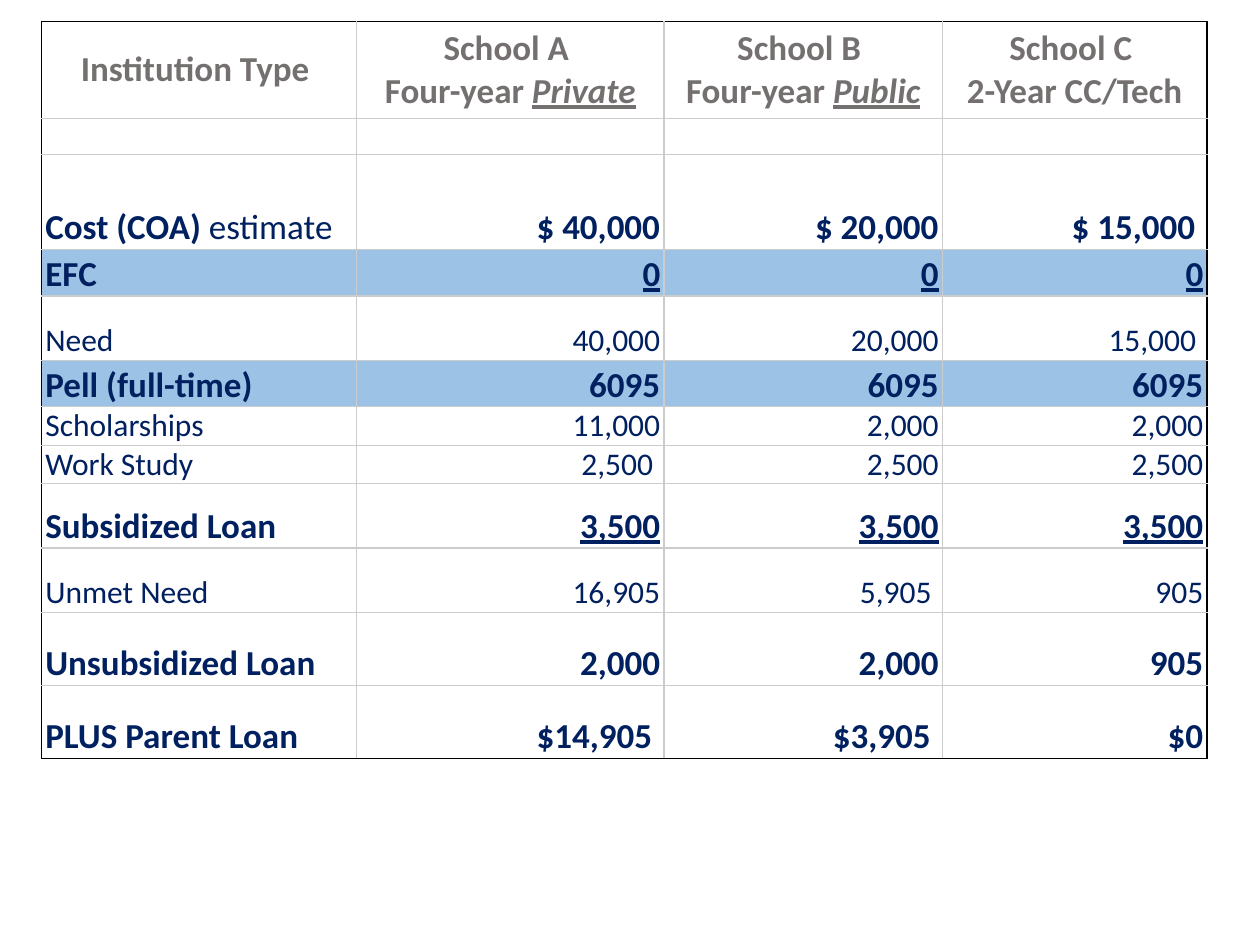
"""Build a slide that compares financial aid at three schools."""
import dataclasses

import lxml.etree
import pptx
import pptx.dml.color
import pptx.enum.text
import pptx.oxml.ns
import pptx.util

Inches = pptx.util.Inches
Align = pptx.enum.text.PP_ALIGN
Anchor = pptx.enum.text.MSO_ANCHOR


@dataclasses.dataclass(frozen=True)
class Theme:
    font: str = "Calibri"
    head: str = "757070"
    ink: str = "002060"
    band: str = "9CC2E5"
    grid: str = "CCCCCC"
    edge: str = "000000"
    big: int = 20
    small: int = 18
    tiny: int = 10
    line: float = 0.75


THEME = Theme()
WIDTHS = [2.5, 2.44, 2.21, 2.1]
HEADS = [
    [[("Institution Type ", "b")]],
    [[("School A ", "b")], [("Four-year ", "b"), ("Private", "biu")]],
    [[("School B ", "b")], [("Four-year ", "b"), ("Public", "biu")]],
    [[("School C ", "b")], [("2-Year CC/Tech", "b")]],
]
ROWS = [
    (0.75, "Cost (COA) ", ["$ 40,000", "$ 20,000", "$ 15,000 "], "b"),
    (0.37, "EFC", ["0", "0", "0"], "bu"),
    (0.51, "Need", ["40,000", "20,000", "15,000 "], ""),
    (0.37, "Pell (full-time)", ["6095", "6095", "6095"], "b"),
    (0.29, "Scholarships", ["11,000", "2,000", "2,000"], ""),
    (0.29, "Work Study", ["2,500 ", "2,500", "2,500"], ""),
    (0.51, "Subsidized Loan", ["3,500", "3,500", "3,500"], "bu"),
    (0.51, "Unmet Need", ["16,905", "5,905 ", "905"], ""),
    (0.58, "Unsubsidized Loan", ["2,000", "2,000", "905"], "b"),
    (0.58, "PLUS Parent Loan", ["$14,905 ", "$3,905 ", "$0"], "b"),
]
NOTES = {"Cost (COA) ": "estimate"}
BANDS = {"EFC", "Pell (full-time)"}
HEIGHTS = [0.77, 0.29] + [row[0] for row in ROWS]


def add_run(para, text, style, size, color):
    """Add one run; style letters mean bold, italic and underline."""
    run = para.add_run()
    run.text = text
    font = run.font
    font.name, font.size = THEME.font, pptx.util.Pt(size)
    font.bold, font.italic, font.underline = (key in style for key in "biu")
    font.color.rgb = pptx.dml.color.RGBColor.from_string(color)


def fill_text(cell, lines, align, anchor, size, color):
    """Write lines of runs into a cell."""
    cell.vertical_anchor = anchor
    frame = cell.text_frame
    for num, runs in enumerate(lines):
        para = frame.add_paragraph() if num else frame.paragraphs[0]
        para.alignment = align
        for text, style in runs:
            add_run(para, text, style, size, color)


def set_edge(cell, side, color):
    """Draw one border of a cell."""
    props = cell._tc.get_or_add_tcPr()
    name = pptx.oxml.ns.qn
    line = lxml.etree.SubElement(props, name("a:ln" + side))
    line.set("w", str(pptx.util.Pt(THEME.line)))
    fill = lxml.etree.SubElement(line, name("a:solidFill"))
    lxml.etree.SubElement(fill, name("a:srgbClr")).set("val", color)


def style_cell(cell, row, col, band):
    """Set the margins, borders and fill of a cell."""
    cell.margin_left = cell.margin_right = Inches(0.03)
    cell.margin_top = cell.margin_bottom = 0
    outer = {"L": col == 0, "R": col == len(WIDTHS) - 1,
             "T": row == 0, "B": row == len(HEIGHTS) - 1}
    for side, edge in outer.items():
        set_edge(cell, side, THEME.edge if edge else THEME.grid)
    if band:
        cell.fill.solid()
        cell.fill.fore_color.rgb = pptx.dml.color.RGBColor.from_string(THEME.band)
    else:
        cell.fill.background()


def shrink(cell):
    """Keep an empty cell from growing its row."""
    para = cell.text_frame.paragraphs[0]._p
    end = lxml.etree.SubElement(para, pptx.oxml.ns.qn("a:endParaRPr"))
    end.set("sz", str(THEME.tiny * 100))


def add_grid(slide):
    """Add the styled table with no text."""
    table = slide.shapes.add_table(
        len(HEIGHTS), len(WIDTHS), Inches(0.33), Inches(0.17),
        Inches(sum(WIDTHS)), Inches(sum(HEIGHTS))).table
    table.first_row = table.horz_banding = False
    for col, width in zip(table.columns, WIDTHS):
        col.width = Inches(width)
    bands = [False, False] + [row[1] in BANDS for row in ROWS]
    for num, (height, band) in enumerate(zip(HEIGHTS, bands)):
        table.rows[num].height = Inches(height)
        for col in range(len(WIDTHS)):
            style_cell(table.cell(num, col), num, col, band)
    return table


def fill_head(table):
    """Write the header row and the gap below it."""
    for col, lines in enumerate(HEADS):
        fill_text(table.cell(0, col), lines, Align.CENTER, Anchor.MIDDLE,
                  THEME.big, THEME.head)
        shrink(table.cell(1, col))


def fill_body(table):
    """Write the label and amounts of each row."""
    for num, (_, label, values, style) in enumerate(ROWS, 2):
        size = THEME.big if "b" in style else THEME.small
        runs = [(label, style.replace("u", ""))]
        if label in NOTES:
            runs.append((NOTES[label], ""))
        fill_text(table.cell(num, 0), [runs], Align.LEFT, Anchor.BOTTOM,
                  size, THEME.ink)
        for col, value in enumerate(values, 1):
            fill_text(table.cell(num, col), [[(value, style)]], Align.RIGHT,
                      Anchor.BOTTOM, size, THEME.ink)


def main():
    """Build and save the slide."""
    deck = pptx.Presentation()
    deck.slide_width, deck.slide_height = Inches(10), Inches(7.5)
    slide = deck.slides.add_slide(deck.slide_layouts[6])
    table = add_grid(slide)
    fill_head(table)
    fill_body(table)
    deck.save("out.pptx")


if __name__ == "__main__":
    main()
